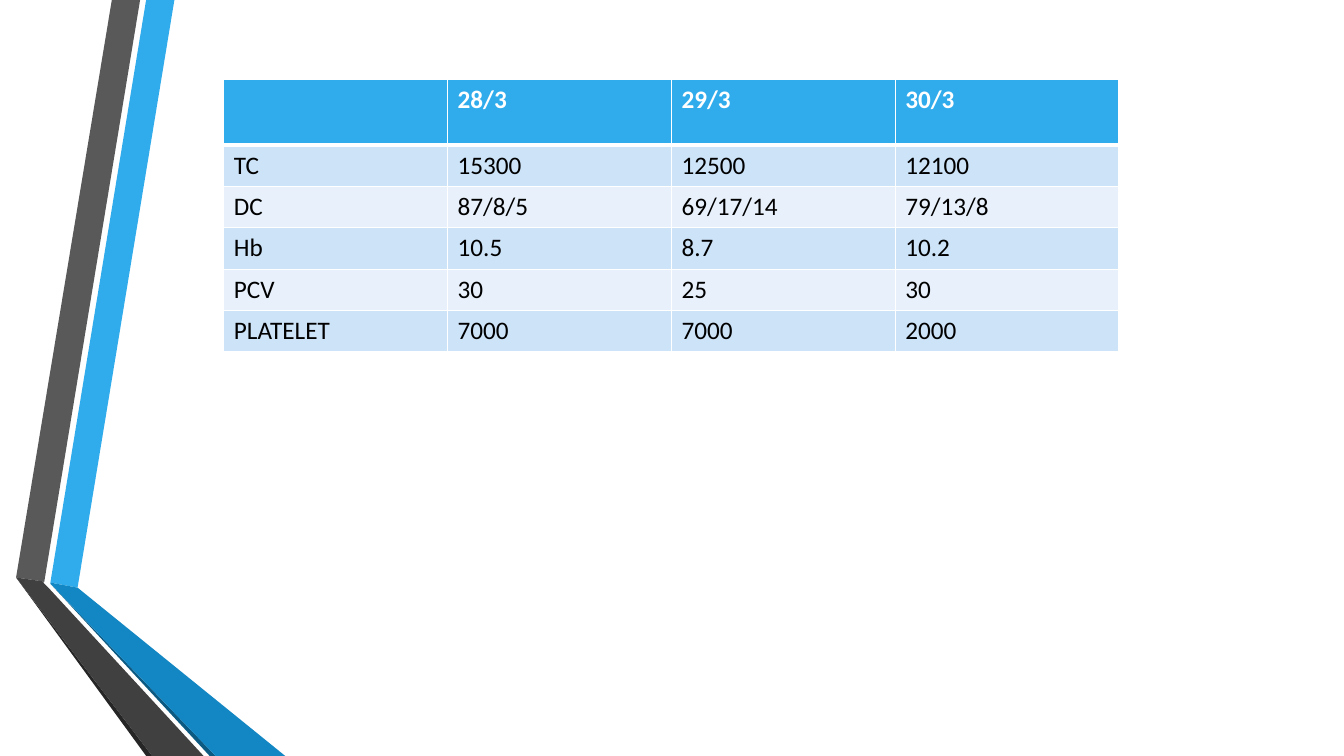
from lxml.etree import SubElement
from pptx import Presentation
from pptx.dml.color import RGBColor
from pptx.oxml.ns import qn
from pptx.util import Inches, Pt


def color(hex_value):
    return RGBColor.from_string(hex_value)


class LabSlide:
    font = "Calibri"
    size = Pt(18)
    white, black = "FFFFFF", "000000"
    header_fill = "30ACEC"
    bands = ("CDE3F8", "E8F1FB")

    def __init__(self, presentation):
        self.slide = presentation.slides.add_slide(presentation.slide_layouts[6])

    def ribbon(self, fill, points):
        corners = [(Inches(x), Inches(y)) for x, y in points]
        builder = self.slide.shapes.build_freeform(*corners[0])
        builder.add_line_segments(corners[1:], close=True)
        facet = builder.convert_to_shape()
        facet.shadow.inherit = False
        facet.fill.solid()
        facet.fill.fore_color.rgb = color(fill)
        facet.line.fill.background()

    def border(self, cell, side, width):
        line = SubElement(cell._tc.get_or_add_tcPr(), qn(f"a:ln{side}"), w=str(Pt(width)))
        paint = SubElement(line, qn("a:solidFill"))
        SubElement(paint, qn("a:srgbClr"), val=self.white)

    def cell(self, cell, text, row):
        header = row == 0
        widths = {"L": 1, "R": 1, "T": 3 if row == 1 else 1, "B": 3 if header else 1}
        for side, width in widths.items():
            self.border(cell, side, width)
        cell.fill.solid()
        cell.fill.fore_color.rgb = color(self.header_fill if header else self.bands[(row - 1) % 2])
        paragraph = cell.text_frame.paragraphs[0]
        paragraph.font.size = self.size
        if text:
            run = paragraph.add_run()
            run.text = text
            run.font.name = self.font
            run.font.size = self.size
            run.font.bold = header
            run.font.color.rgb = color(self.white if header else self.black)

    def table(self, left, top, column_width, heights, rows):
        columns = len(rows[0])
        grid = self.slide.shapes.add_table(
            len(rows), columns, Inches(left), Inches(top),
            Inches(column_width * columns), Inches(sum(heights))).table
        for column in grid.columns:
            column.width = Inches(column_width)
        for r, (height, values) in enumerate(zip(heights, rows)):
            grid.rows[r].height = Inches(height)
            for c, value in enumerate(values):
                self.cell(grid.cell(r, c), value, r)


# Folded ribbons on the left edge, back to front
RIBBONS = [
    ("30ACEC", [(0.5, 5.78), (0.77, 5.83), (1.73, 0), (1.45, 0)]),
    ("595959", [(1.39, 0), (1.11, 0), (0.16, 5.73), (0.44, 5.77)]),
    ("262626", [(0.16, 5.73), (1.45, 7.5), (1.51, 7.5)]),
    ("0C5A82", [(0.5, 5.79), (2.08, 7.5), (2.14, 7.5)]),
    ("1287C3", [(0.5, 5.79), (2.14, 7.5), (2.83, 7.5), (0.77, 5.83), (0.5, 5.78)]),
    ("404040", [(2.02, 7.5), (0.48, 5.83), (0.43, 5.78), (0.44, 5.77),
                (0.16, 5.73), (1.51, 7.5)]),
]

# Blood counts by date
BLOOD_COUNTS = [
    ("", "28/3", "29/3", "30/3"),
    ("TC", "15300", "12500", "12100"),
    ("DC", "87/8/5", "69/17/14", "79/13/8"),
    ("Hb", "10.5", "8.7", "10.2"),
    ("PCV", "30", "25", "30"),
    ("PLATELET", "7000", "7000", "2000"),
]


def main():
    presentation = Presentation()
    presentation.slide_width = Inches(13.33)
    presentation.slide_height = Inches(7.5)
    lab = LabSlide(presentation)
    for fill, points in RIBBONS:
        lab.ribbon(fill, points)
    heights = [0.65] + [0.41] * (len(BLOOD_COUNTS) - 1)
    lab.table(2.22, 0.79, 2.22, heights, BLOOD_COUNTS)
    presentation.save("out.pptx")


if __name__ == "__main__":
    main()
